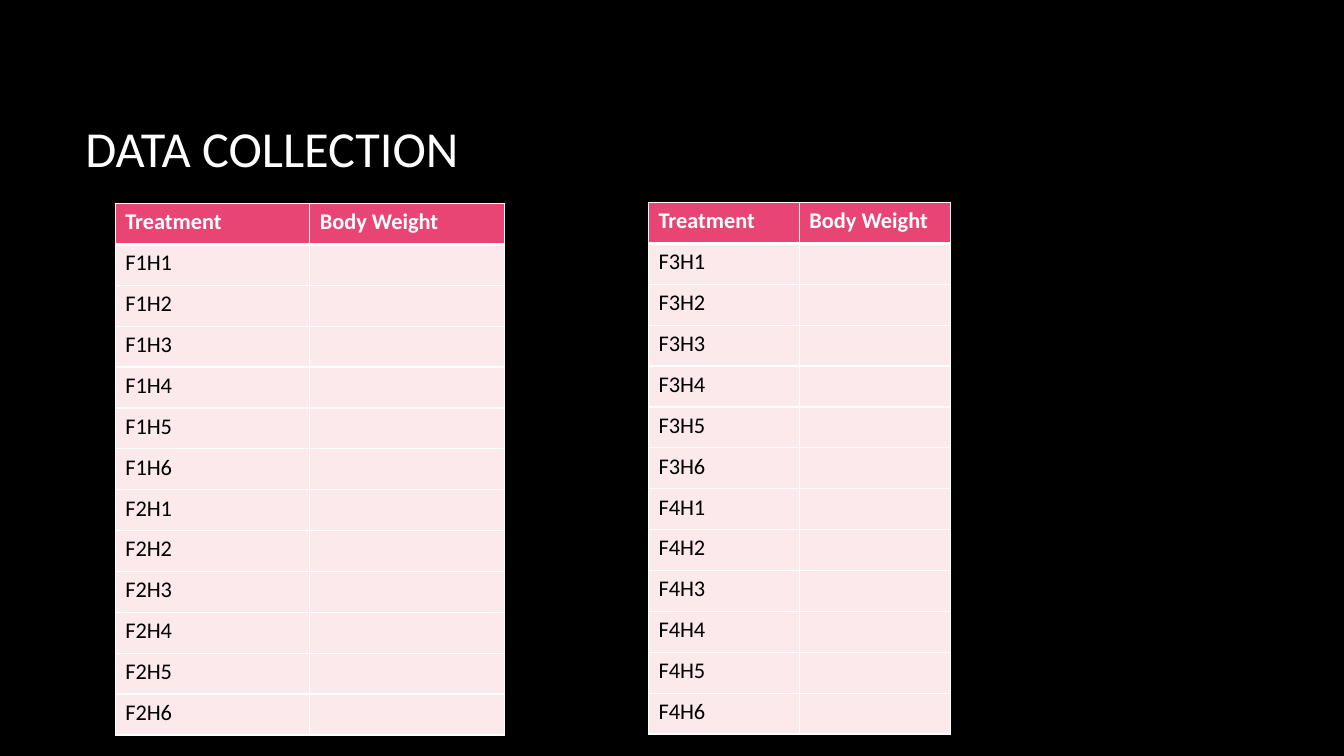
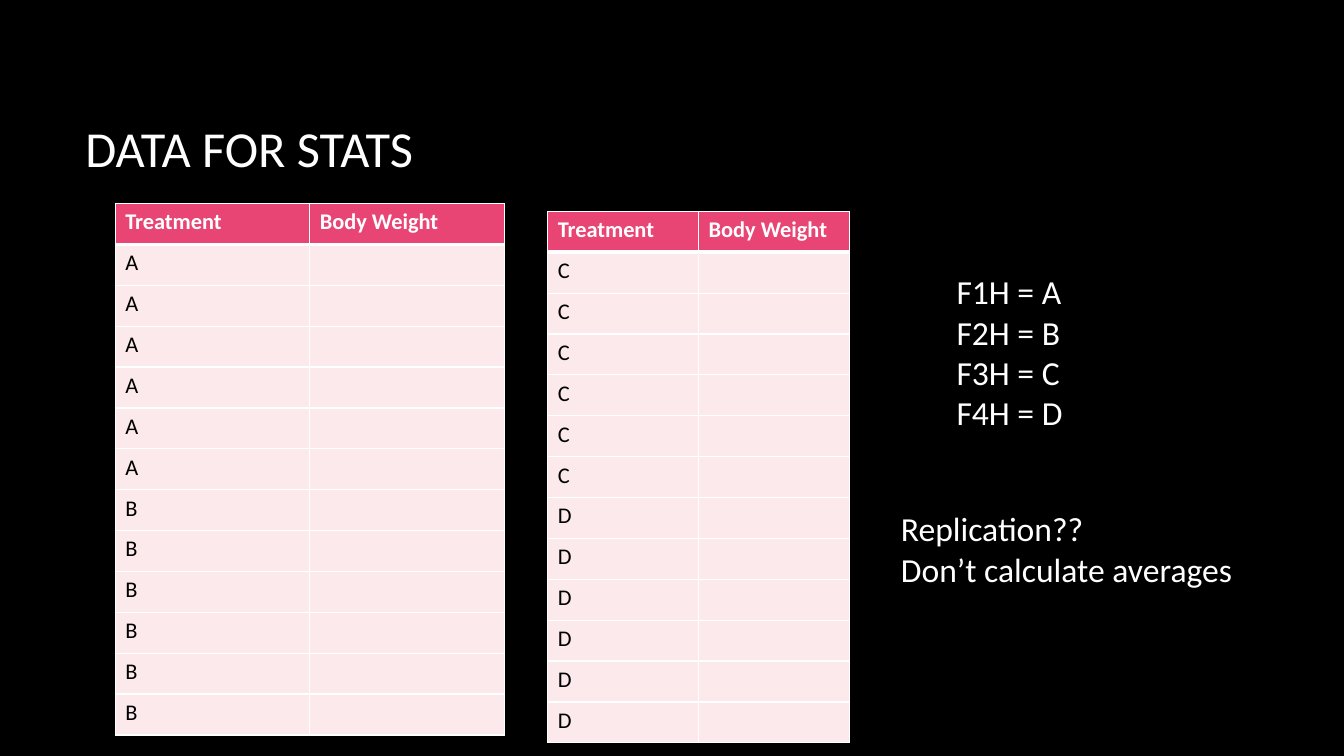
from lxml.etree import SubElement
from pptx import Presentation
from pptx.dml.color import RGBColor
from pptx.enum.text import MSO_ANCHOR, MSO_AUTO_SIZE
from pptx.oxml.ns import qn
from pptx.util import Pt

BLACK = RGBColor(0x00, 0x00, 0x00)
WHITE = RGBColor(0xFF, 0xFF, 0xFF)
PINK = RGBColor(0xE8, 0x45, 0x74)
PALE_PINK = RGBColor(0xFB, 0xE9, 0xEB)
FONT = "Calibri"
HEADERS = ("Treatment", "Body Weight")
ROW_HEIGHT = 29.2
THIN, THICK = 1, 3
HOUSES = range(1, 7)


def write_text(frame, text, size=16, color=WHITE, bold=False):
    for index, line in enumerate(text.split("\n")):
        paragraph = frame.paragraphs[0] if index == 0 else frame.add_paragraph()
        run = paragraph.add_run()
        run.text = line
        run.font.name = FONT
        run.font.size = Pt(size)
        run.font.bold = bold
        run.font.color.rgb = color


def add_borders(cell, top=THIN, bottom=THIN):
    properties = cell._tc.get_or_add_tcPr()
    widths = {"a:lnL": THIN, "a:lnR": THIN, "a:lnT": top, "a:lnB": bottom}
    for tag, width in widths.items():
        line = SubElement(properties, qn(tag), w=str(Pt(width)))
        fill = SubElement(line, qn("a:solidFill"))
        SubElement(fill, qn("a:srgbClr"), val=str(WHITE))


class Deck:
    def __init__(self):
        self.presentation = Presentation()
        self.presentation.slide_width = Pt(960)
        self.presentation.slide_height = Pt(540)
        self.slide = None

    def add_slide(self, title):
        layout = self.presentation.slide_layouts[6]
        self.slide = self.presentation.slides.add_slide(layout)
        background = self.slide.background.fill
        background.solid()
        background.fore_color.rgb = BLACK
        frame = self.add_text(title, 54, 48, 798, 114.5, size=36)
        frame.auto_size = MSO_AUTO_SIZE.NONE
        frame.vertical_anchor = MSO_ANCHOR.MIDDLE

    def add_text(self, text, left, top, width, height, size=24):
        shape = self.slide.shapes.add_textbox(Pt(left), Pt(top), Pt(width), Pt(height))
        frame = shape.text_frame
        frame.word_wrap = True
        frame.auto_size = MSO_AUTO_SIZE.SHAPE_TO_FIT_TEXT
        write_text(frame, text, size=size)
        return frame

    def add_table(self, treatments, left, top, column_width):
        rows = [HEADERS] + [(treatment, "") for treatment in treatments]
        table = self.slide.shapes.add_table(
            len(rows), len(HEADERS), Pt(left), Pt(top),
            Pt(column_width * len(HEADERS)), Pt(ROW_HEIGHT * len(rows))).table
        for column in table.columns:
            column.width = Pt(column_width)
        for row_index, values in enumerate(rows):
            table.rows[row_index].height = Pt(ROW_HEIGHT)
            is_header = row_index == 0
            for column_index, value in enumerate(values):
                cell = table.cell(row_index, column_index)
                add_borders(cell, top=THICK if row_index == 1 else THIN,
                            bottom=THICK if is_header else THIN)
                cell.fill.solid()
                cell.fill.fore_color.rgb = PINK if is_header else PALE_PINK
                if value:
                    write_text(cell.text_frame, value, bold=is_header,
                               color=WHITE if is_header else BLACK)


def treatment_codes(*feeds):
    return [f"F{feed}H{house}" for feed in feeds for house in HOUSES]


def treatment_letters(letters):
    return [letter for letter in letters for house in HOUSES]


def main():
    deck = Deck()

    deck.add_slide("DATA COLLECTION")
    deck.add_table(treatment_codes(1, 2), 82.3, 145.4, 139)
    deck.add_table(treatment_codes(3, 4), 463.2, 144.7, 107.8)

    deck.add_slide("DATA FOR STATS")
    deck.add_table(treatment_letters("AB"), 82.3, 145.4, 139)
    deck.add_table(treatment_letters("CD"), 391.2, 151, 107.8)
    legend = [f"F{feed}H = {letter}" for feed, letter in enumerate("ABCD", 1)]
    deck.add_text("\n".join(legend), 676.2, 190.2, 199.5, 124)
    deck.add_text("Replication??\nDon’t calculate averages", 636.5, 359.5, 309.6, 65.5)

    deck.presentation.save("out.pptx")


if __name__ == "__main__":
    main()
